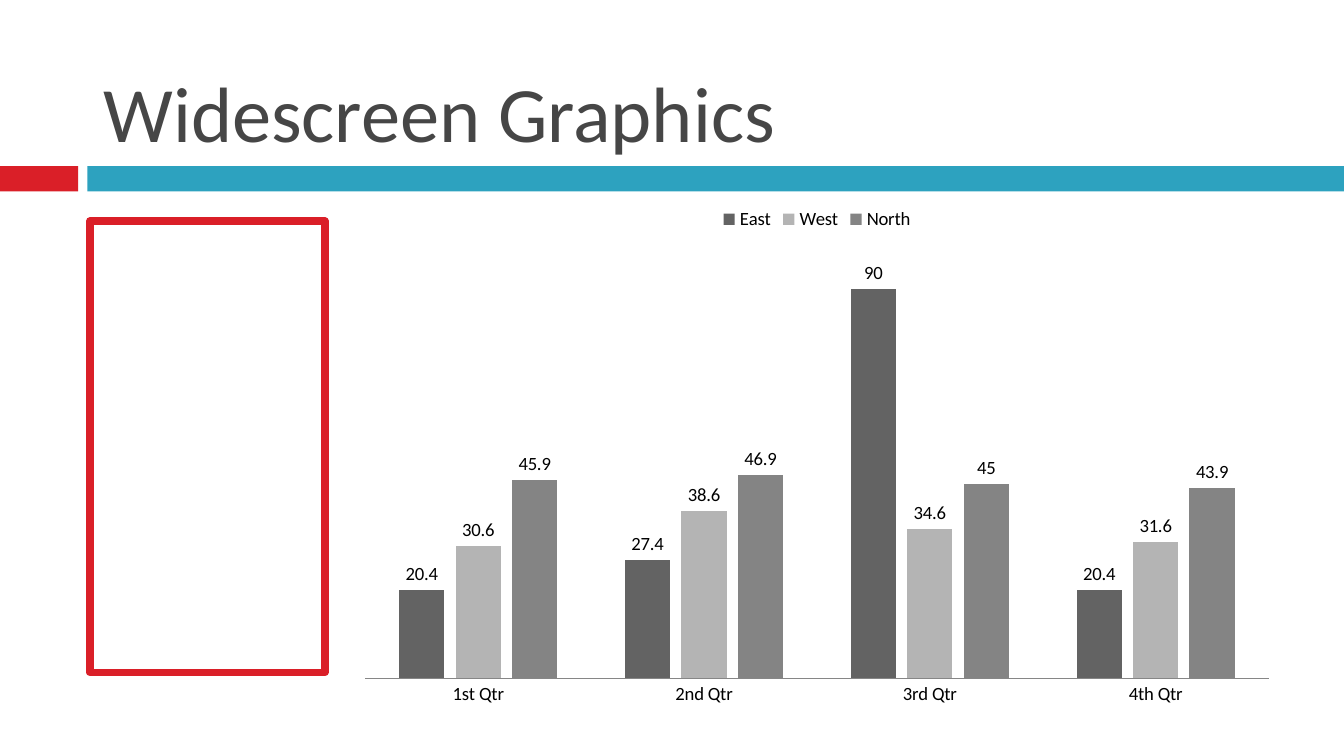
from dataclasses import dataclass
from typing import Optional

from pptx import Presentation
from pptx.chart.data import CategoryChartData
from pptx.dml.color import RGBColor
from pptx.enum.chart import (XL_CHART_TYPE, XL_LABEL_POSITION, XL_LEGEND_POSITION,
                             XL_TICK_MARK)
from pptx.enum.shapes import MSO_SHAPE
from pptx.enum.text import MSO_ANCHOR, MSO_AUTO_SIZE, PP_ALIGN
from pptx.util import Cm, Pt

RECTANGLE = MSO_SHAPE.RECTANGLE
COLUMNS = XL_CHART_TYPE.COLUMN_CLUSTERED
LABEL_ABOVE = XL_LABEL_POSITION.OUTSIDE_END
LEGEND_TOP = XL_LEGEND_POSITION.TOP
NO_TICKS = XL_TICK_MARK.NONE
BOTTOM = MSO_ANCHOR.BOTTOM
LEFT = PP_ALIGN.LEFT
NO_AUTOSIZE = MSO_AUTO_SIZE.NONE

FONT = "Calibri"
COLORS = {
    "title": "464646",
    "red": "DA1F28",
    "teal": "2DA2BF",
    "text": "000000",
    "axis": "868686",
    "east": "636363",
    "west": "B4B4B4",
    "north": "848484",
}


@dataclass(frozen=True)
class Area:
    left: float
    top: float
    width: float
    height: float

    def lengths(self) -> tuple:
        return Cm(self.left), Cm(self.top), Cm(self.width), Cm(self.height)


@dataclass(frozen=True)
class Panel:
    area: Area
    fill: Optional[str] = None
    line: Optional[str] = None


@dataclass(frozen=True)
class Region:
    name: str
    values: tuple
    color: str


TITLE_AREA = Area(1.7, 0.2, 22.43, 2.92)
CHART_AREA = Area(6.55, 3.66, 17.78, 9.86)
PANELS = (
    Panel(Area(0, 3.14, 1.48, 0.48), fill="red"),
    Panel(Area(1.65, 3.14, 23.75, 0.48), fill="teal"),
    Panel(Area(1.7, 4.18, 4.44, 8.53), line="red"),
)
QUARTERS = ("1st Qtr", "2nd Qtr", "3rd Qtr", "4th Qtr")
REGIONS = (
    Region("East", (20.4, 27.4, 90, 20.4), "east"),
    Region("West", (30.6, 38.6, 34.6, 31.6), "west"),
    Region("North", (45.9, 46.9, 45, 43.9), "north"),
)


def color(name: str) -> RGBColor:
    return RGBColor.from_string(COLORS[name])


def apply(target, values: dict) -> None:
    for name, value in values.items():
        setattr(target, name, value)


def format_font(font, size: float, color_name: str) -> None:
    apply(font, {"name": FONT, "size": Pt(size), "bold": False})
    font.color.rgb = color(color_name)


def draw_title(page, text: str) -> None:
    title = page.shapes.title
    left, top, width, height = TITLE_AREA.lengths()
    apply(title, {"left": left, "top": top, "width": width, "height": height})
    frame = title.text_frame
    frame.text = text
    apply(frame, {"vertical_anchor": BOTTOM, "word_wrap": True, "auto_size": NO_AUTOSIZE})
    para = frame.paragraphs[0]
    para.alignment = LEFT
    format_font(para.runs[0].font, 42, "title")


def draw_panel(page, panel: Panel) -> None:
    box = page.shapes.add_shape(RECTANGLE, *panel.area.lengths())
    box.shadow.inherit = False
    if panel.fill:
        box.fill.solid()
        box.fill.fore_color.rgb = color(panel.fill)
    else:
        box.fill.background()
    if panel.line:
        box.line.color.rgb = color(panel.line)
        box.line.width = Pt(4)
    else:
        box.line.fill.background()


def draw_chart(page) -> None:
    data = CategoryChartData()
    data.categories = QUARTERS
    for region in REGIONS:
        data.add_series(region.name, region.values)
    chart = page.shapes.add_chart(COLUMNS, *CHART_AREA.lengths(), data).chart
    apply(chart, {"has_title": False, "has_legend": True})
    format_font(chart.font, 10, "text")
    apply(chart.legend, {"position": LEGEND_TOP, "include_in_layout": False})

    apply(chart.value_axis, {"visible": False, "has_major_gridlines": False,
                             "minimum_scale": 0, "maximum_scale": 100})
    axis = chart.category_axis
    apply(axis, {"major_tick_mark": NO_TICKS, "minor_tick_mark": NO_TICKS})
    axis.format.line.color.rgb = color("axis")

    plot = chart.plots[0]
    apply(plot, {"overlap": -25, "gap_width": 150, "vary_by_categories": False,
                 "has_data_labels": True})
    apply(plot.data_labels, {"show_value": True, "position": LABEL_ABOVE,
                             "number_format": "General",
                             "number_format_is_linked": False})
    for series, region in zip(plot.series, REGIONS):
        series.format.fill.solid()
        series.format.fill.fore_color.rgb = color(region.color)


def main() -> None:
    deck = Presentation()
    apply(deck, {"slide_width": Cm(25.4), "slide_height": Cm(14.29)})
    page = deck.slides.add_slide(deck.slide_layouts.get_by_name("Title Only"))
    draw_title(page, "Widescreen Graphics")
    for panel in PANELS:
        draw_panel(page, panel)
    draw_chart(page)
    deck.save("out.pptx")


if __name__ == "__main__":
    main()
